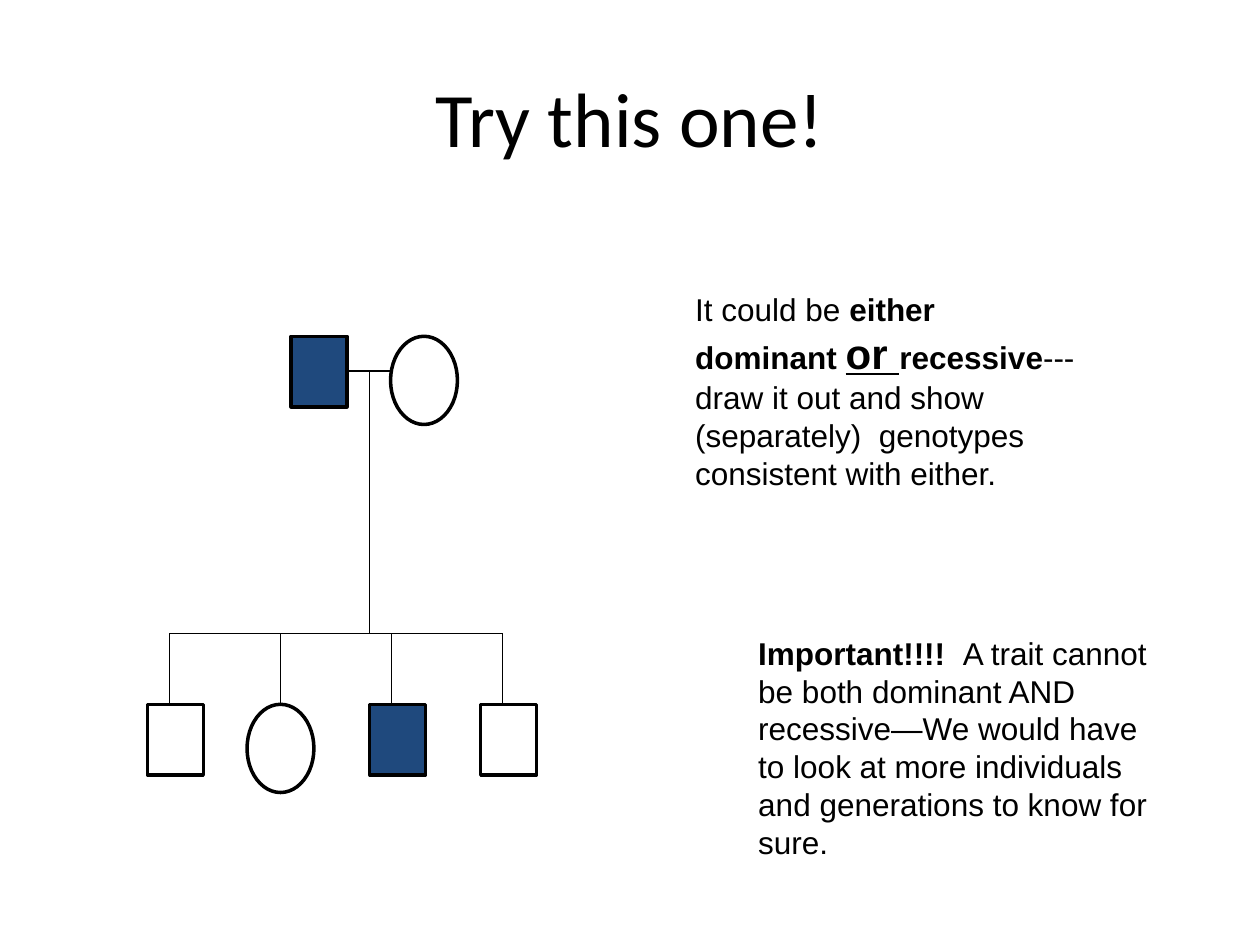
"""Build the pedigree exercise slide."""
import pptx
import pptx.dml.color
import pptx.enum.shapes
import pptx.enum.text
import pptx.oxml
import pptx.util
from pptx.util import Pt


def color(value):
    return pptx.dml.color.RGBColor.from_string(value)


BLACK, WHITE, AFFECTED = "000000", "FFFFFF", "1F497D"
SYMBOLS = {
    "male": (pptx.enum.shapes.MSO_SHAPE.RECTANGLE, 32, 40.3),
    "female": (pptx.enum.shapes.MSO_SHAPE.OVAL, 38.2, 50.4),
}

presentation = pptx.Presentation()
presentation.slide_width, presentation.slide_height = Pt(720), Pt(540)
slide = presentation.slides.add_slide(presentation.slide_layouts[5])

title = slide.shapes.title
title.left, title.top, title.width, title.height = Pt(36), Pt(21.6), Pt(648), Pt(90)
title.text_frame.vertical_anchor = pptx.enum.text.MSO_ANCHOR.MIDDLE
paragraph = title.text_frame.paragraphs[0]
paragraph.text = "Try this one!"
paragraph.alignment = pptx.enum.text.PP_ALIGN.CENTER
for name, value in {"size": Pt(44), "name": "Calibri"}.items():
    setattr(paragraph.runs[0].font, name, value)
paragraph.runs[0].font.color.rgb = color(BLACK)

pedigree = slide.shapes.add_group_shape()
parents_y, siblings_y, children_y = 212, 362.2, 402.5
descent_x = 211
child_x = [96.8 + 63.5 * index for index in range(4)]

lines = [
    (198, parents_y, 223.2, parents_y),
    (descent_x, parents_y, descent_x, siblings_y),
    (child_x[0], siblings_y, child_x[-1], siblings_y),
]
lines += [(x, children_y, x, siblings_y) for x in child_x]
for ends in lines:
    connector = pedigree.shapes.add_connector(
        pptx.enum.shapes.MSO_CONNECTOR.STRAIGHT, *map(Pt, ends))
    connector.line.width = Pt(0.75)
    connector.line.color.rgb = color(BLACK)
    connector._element.spPr.append(pptx.oxml.parse_xml(
        '<a:effectLst xmlns:a="http://schemas.openxmlformats.org/drawingml/2006/main"/>'))

people = [("male", 166.3, 192.2, AFFECTED), ("female", 223.2, 192.2, WHITE)]
children = [("male", WHITE), ("female", WHITE), ("male", AFFECTED), ("male", WHITE)]
for x, (sex, fill) in zip(child_x, children):
    people.append((sex, x - (12.6 if sex == "male" else 19.1), children_y, fill))
for sex, left, top, fill in people:
    preset, width, height = SYMBOLS[sex]
    shape = pedigree.shapes.add_shape(preset, Pt(left), Pt(top), Pt(width), Pt(height))
    shape.shadow.inherit = False
    shape.fill.solid()
    shape.fill.fore_color.rgb = color(fill)
    shape.line.width = Pt(2)
    shape.line.color.rgb = color(BLACK)

notes = [
    ((390.2, 162, 234, 123.8), [
        ("It could be ", {}),
        ("either dominant ", {"bold": True}),
        ("or ", {"bold": True, "size": Pt(24), "underline": True}),
        ("recessive", {"bold": True}),
        ("---draw it out and show (separately)  genotypes consistent with either.", {}),
    ]),
    ((426.2, 358.6, 246.2, 138.2), [
        ("Important!!!!  ", {"bold": True}),
        ("A trait cannot be both dominant AND recessive—We would have to look at "
         "more individuals and generations to know for sure.", {}),
    ]),
]
for box, runs in notes:
    text_box = slide.shapes.add_textbox(*map(Pt, box))
    text_box.text_frame.word_wrap = True
    paragraph = text_box.text_frame.paragraphs[0]
    for text, changes in runs:
        run = paragraph.add_run()
        run.text = text
        for name, value in {"name": "Arial", "size": Pt(18), **changes}.items():
            setattr(run.font, name, value)
        run.font.color.rgb = color(BLACK)

presentation.save("out.pptx")
